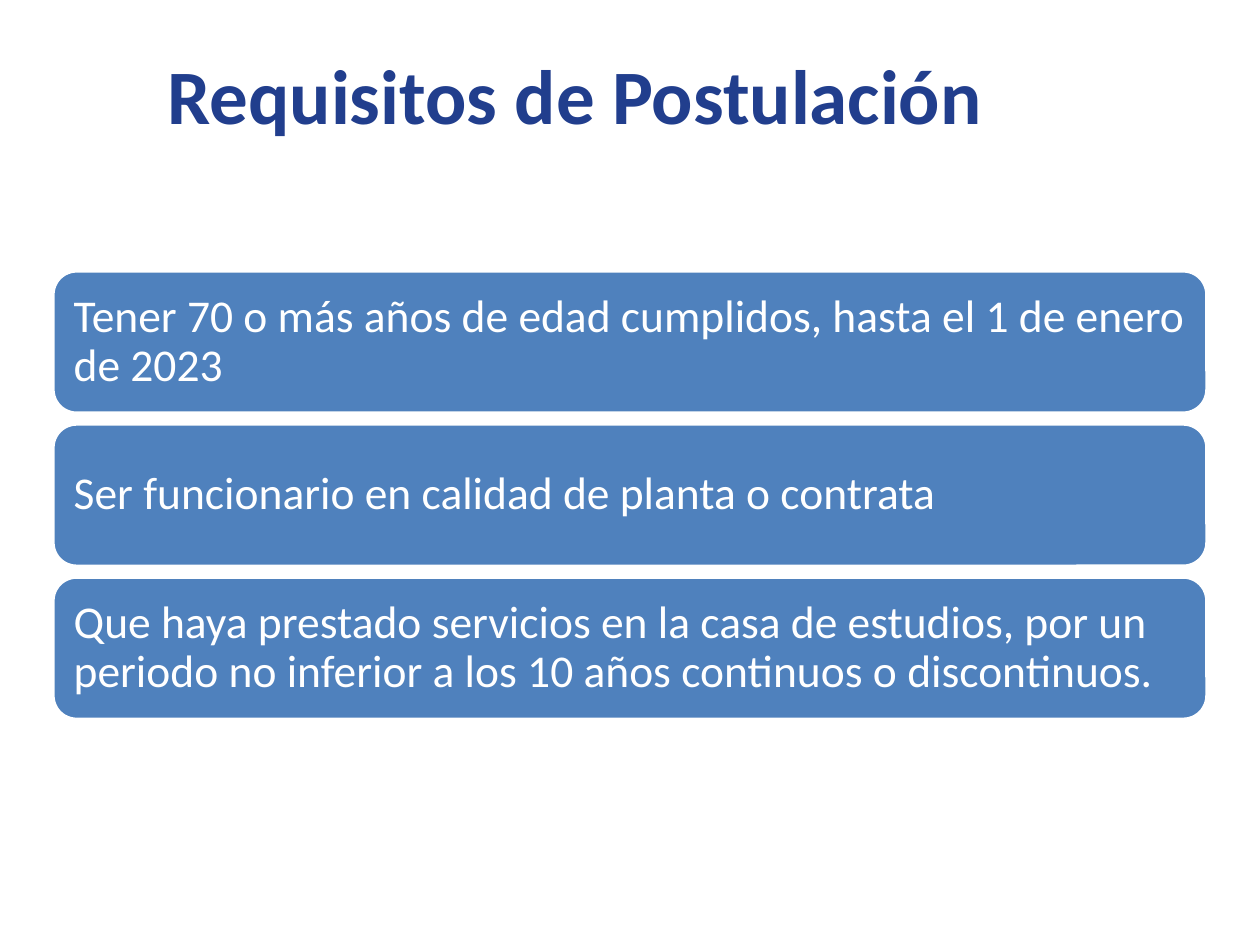
from pptx import Presentation
from pptx.dml.color import RGBColor
from pptx.enum.shapes import MSO_SHAPE
from pptx.enum.text import MSO_ANCHOR, PP_ALIGN
from pptx.util import Inches, Pt

TITLE = "Requisitos de Postulación"
REQUIREMENTS = [
    "Tener 70 o más años de edad cumplidos, hasta el 1 de enero de 2023",
    "Ser funcionario en calidad de planta o contrata",
    "Que haya prestado servicios en la casa de estudios, por un periodo no "
    "inferior a los 10 años continuos o discontinuos.",
]

NAVY = RGBColor(0x21, 0x3E, 0x8D)
BLUE = RGBColor(0x4F, 0x81, 0xBD)
WHITE = RGBColor(0xFF, 0xFF, 0xFF)

SLIDE_WIDTH, SLIDE_HEIGHT = 10, 7.5
CARD_MARGIN, FIRST_CARD_TOP = 0.42, 2.15
CARD_HEIGHT, CARD_PITCH = 1.13, 1.215


def write_text(holder, text, *, size, color, bold=False, inset=0.0,
               anchor=MSO_ANCHOR.TOP, line_spacing=1.0):
    """Fill a shape with one left-aligned formatted paragraph."""
    frame = holder.text_frame
    frame.word_wrap = True
    frame.vertical_anchor = anchor
    frame.margin_left = frame.margin_right = Inches(inset)
    frame.margin_top = frame.margin_bottom = Inches(inset)
    paragraph = frame.paragraphs[0]
    paragraph.alignment = PP_ALIGN.LEFT
    paragraph.line_spacing = line_spacing
    run = paragraph.add_run()
    run.text = text
    run.font.name = "Calibri"
    run.font.size = Pt(size)
    run.font.bold = bold
    run.font.color.rgb = color


def main():
    """Build the slide of application requirements."""
    deck = Presentation()
    deck.slide_width, deck.slide_height = Inches(SLIDE_WIDTH), Inches(SLIDE_HEIGHT)
    slide = deck.slides.add_slide(deck.slide_layouts[5])

    title = slide.shapes.title
    title.left, title.top = Inches(1.33), Inches(0.38)
    title.width, title.height = Inches(7.42), Inches(0.74)
    write_text(title, TITLE, size=44, color=NAVY, bold=True)

    for row, requirement in enumerate(REQUIREMENTS):
        card = slide.shapes.add_shape(
            MSO_SHAPE.ROUNDED_RECTANGLE,
            Inches(CARD_MARGIN), Inches(FIRST_CARD_TOP + row * CARD_PITCH),
            Inches(SLIDE_WIDTH - 2 * CARD_MARGIN), Inches(CARD_HEIGHT))
        card.shadow.inherit = False
        card.fill.solid()
        card.fill.fore_color.rgb = BLUE
        card.line.color.rgb = WHITE
        card.line.width = Pt(2)
        write_text(card, requirement, size=26, color=WHITE, inset=0.11,
                   anchor=MSO_ANCHOR.MIDDLE, line_spacing=0.9)

    deck.save("out.pptx")


if __name__ == "__main__":
    main()
